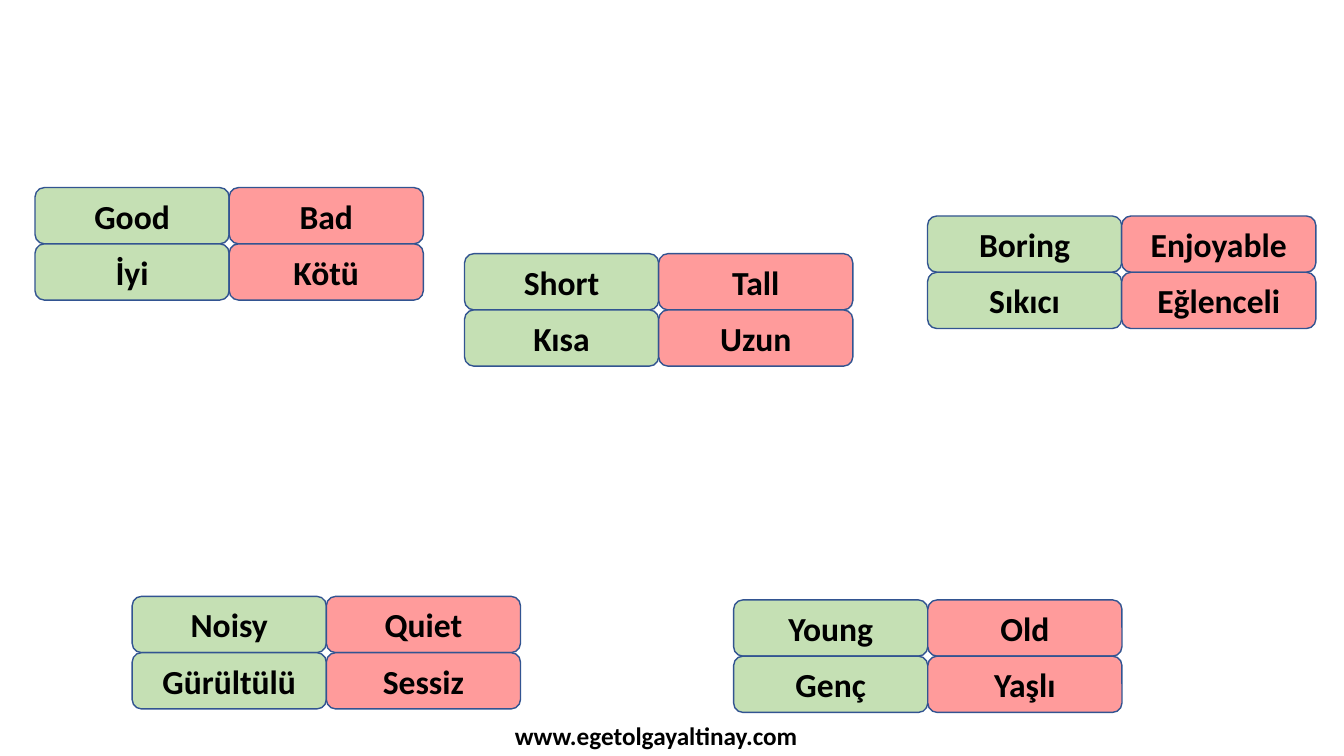
from pptx import Presentation
from pptx import util as u
from pptx.dml.color import RGBColor
from pptx.enum import shapes, text

GREEN = RGBColor(0xC5, 0xE0, 0xB4)
RED = RGBColor(0xFF, 0x9B, 0x9B)
BLUE = RGBColor(0x32, 0x54, 0x91)
BLACK = RGBColor(0, 0, 0)

CARD_WIDTH, CARD_HEIGHT = 138.7, 40.2
FONT = {"name": "Calibri", "bold": True}


def write(frame, wording, size):
    paragraph = frame.paragraphs[0]
    paragraph.text = wording
    paragraph.alignment = text.PP_ALIGN.CENTER
    for key, value in {**FONT, "size": u.Pt(size)}.items():
        setattr(paragraph.font, key, value)
    paragraph.font.color.rgb = BLACK


deck = Presentation()
deck.slide_width, deck.slide_height = u.Pt(960), u.Pt(540)
slide = deck.slides.add_slide(deck.slide_layouts[6])

# Opposites: left, top, then (English, Turkish) for each side
opposites = [
    (25, 134, ("Good", "İyi"), ("Bad", "Kötü")),
    (331.8, 181.2, ("Short", "Kısa"), ("Tall", "Uzun")),
    (662.5, 154.3, ("Boring", "Sıkıcı"), ("Enjoyable", "Eğlenceli")),
    (94.4, 426, ("Noisy", "Gürültülü"), ("Quiet", "Sessiz")),
    (524, 428.5, ("Young", "Genç"), ("Old", "Yaşlı")),
]

# Word cards, two by two
for left, top, *sides in opposites:
    for column, (words, colour) in enumerate(zip(sides, (GREEN, RED))):
        for row, word in enumerate(words):
            card = slide.shapes.add_shape(
                shapes.MSO_SHAPE.ROUNDED_RECTANGLE,
                u.Pt(left + column * CARD_WIDTH), u.Pt(top + row * CARD_HEIGHT),
                u.Pt(CARD_WIDTH), u.Pt(CARD_HEIGHT))
            card.shadow.inherit = False
            card.fill.solid()
            card.fill.fore_color.rgb = colour
            card.line.color.rgb = BLUE
            card.line.width = u.Pt(1)
            card.text_frame.vertical_anchor = text.MSO_ANCHOR.MIDDLE
            write(card.text_frame, word, 24)

# Web address
address = slide.shapes.add_textbox(u.Pt(270.7), u.Pt(511.2), u.Pt(396), u.Pt(29))
address.text_frame.word_wrap = True
address.text_frame.auto_size = text.MSO_AUTO_SIZE.SHAPE_TO_FIT_TEXT
write(address.text_frame, "www.egetolgayaltinay.com", 18)

deck.save("out.pptx")
